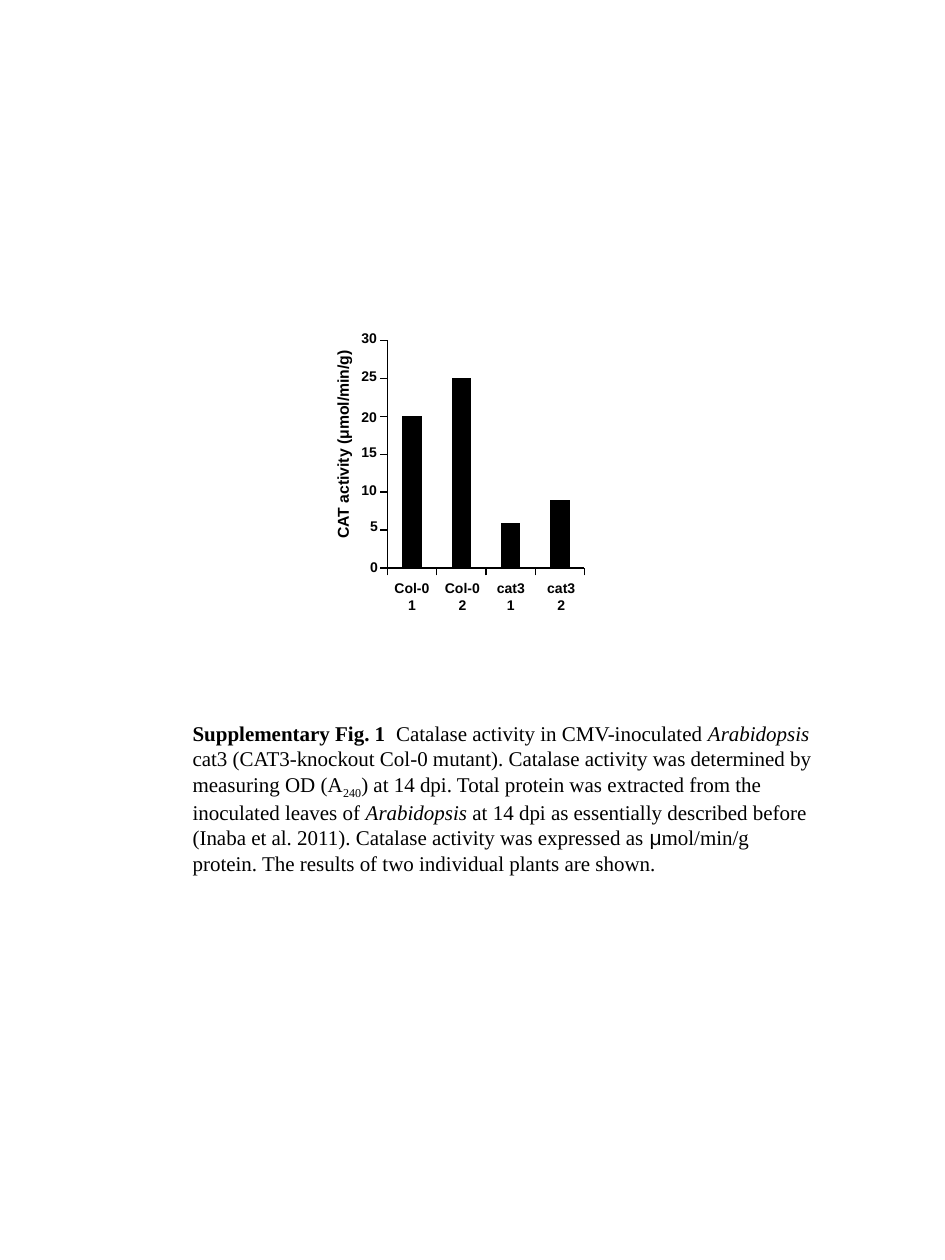
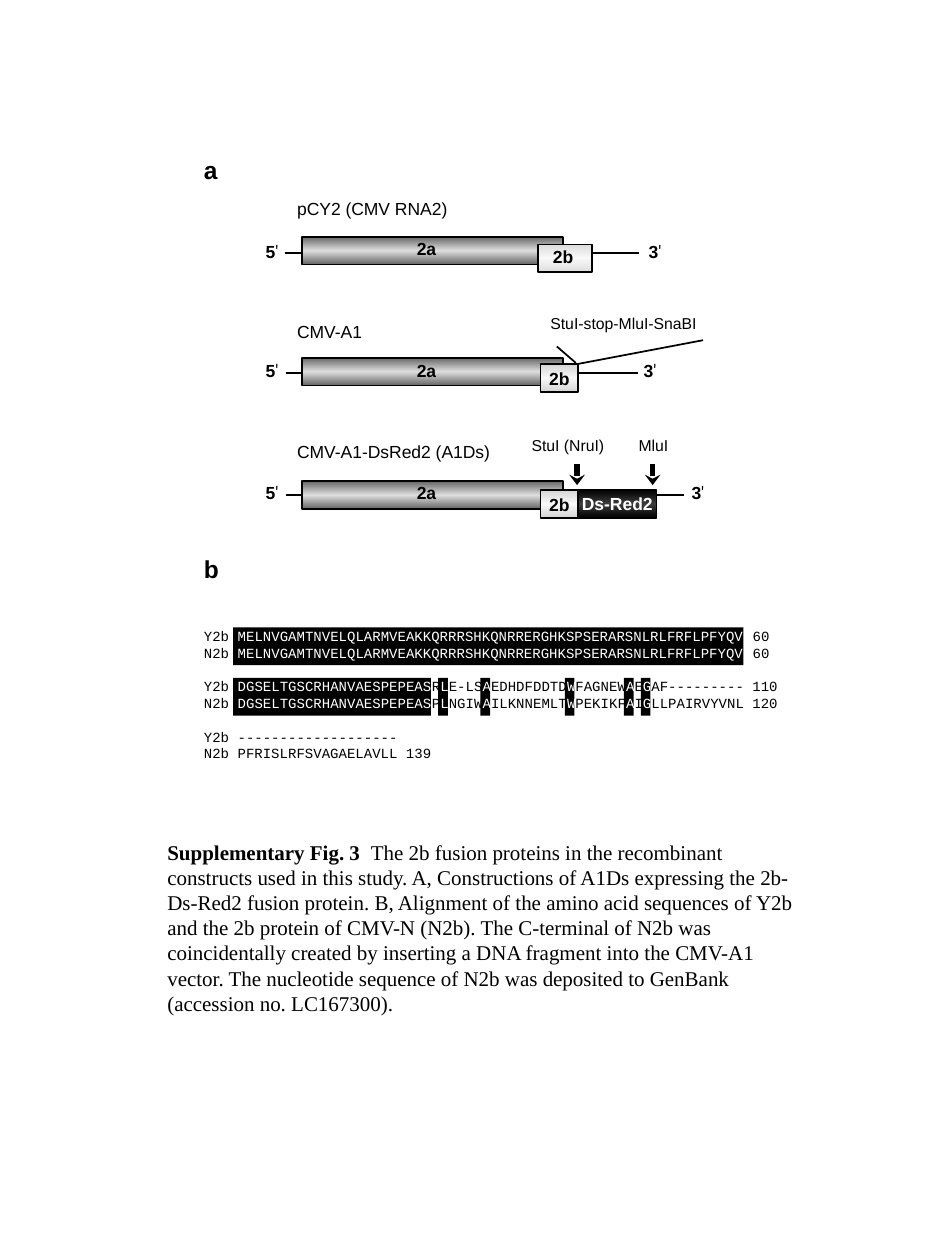
import copy
import itertools

import pptx
import pptx.chart.data
import pptx.dml.color
import pptx.enum.chart
import pptx.enum.shapes
import pptx.enum.text
import pptx.oxml
import pptx.oxml.ns
import pptx.util

Inches = pptx.util.Inches
RGBColor = pptx.dml.color.RGBColor
qn = pptx.oxml.ns.qn
CENTER = pptx.enum.text.PP_ALIGN.CENTER

# Shared colours and text formats
BLACK = RGBColor(0x00, 0x00, 0x00)
WHITE = RGBColor(0xFF, 0xFF, 0xFF)
DARK_GRAY = (RGBColor(0x66, 0x66, 0x66), RGBColor(0xDD, 0xDD, 0xDD))
PALE_GRAY = (RGBColor(0xDD, 0xDD, 0xDD), RGBColor(0xF8, 0xF8, 0xF8))
SOFT_GRAY = (RGBColor(0xD5, 0xD5, 0xD5), RGBColor(0xF8, 0xF8, 0xF8))
NEAR_BLACK = (BLACK, RGBColor(0x3D, 0x3D, 0x3D))

CAPTION = {"name": "Times New Roman", "size": 12}
AXIS = {"name": "Arial", "size": 8, "bold": True}
AXIS_TITLE = {**AXIS, "size": 9}
PANEL = {**AXIS, "size": 14}
NAME = {"name": "Arial", "size": 10}
GENE = {**NAME, "bold": True}
SITE = {"name": "Arial", "size": 9}
SEQUENCE = {"name": "Courier New", "size": 8}
PRIME = ("′", {"name": "Roboto", "bold": False})
BOLD = {"bold": True}
ITALIC = {"italic": True}
WIDE_SPACE = (" ", {"bold": True, "spc": 300})

# Slide 1 content
CAPTION_1 = [
    ("Supplementary Fig. 1", BOLD),
    WIDE_SPACE,
    ("Catalase activity in CMV-inoculated ", {}),
    ("Arabidopsis", ITALIC),
    (" cat3 (CAT3-knockout Col-0 mutant). Catalase activity was determined by "
     "measuring OD (A", {}),
    ("240", {"baseline": -25000}),
    (") at 14 dpi. Total protein was extracted from the inoculated leaves of ", {}),
    ("Arabidopsis", ITALIC),
    (" at 14 dpi as essentially described before (Inaba et al. 2011). "
     "Catalase activity was expressed as ", {}),
    ("μ", {"name": "Arial"}),
    ("mol/min/g protein. The results of two individual plants are shown.", {}),
]
ACTIVITY = [80, 100, 24, 36]
PLANTS = [("Col-0", "1", 3.03, 0.48), ("Col-0", "2", 3.43, 0.48),
          ("cat3", "1", 3.84, 0.43), ("cat3", "2", 4.24, 0.43)]
SCALE = [("30", 2.57), ("25", 2.87), ("20", 3.19), ("15", 3.47),
         ("10", 3.77), ("5", 4.06), ("0", 4.38)]
PLOT_AREA = {"x": 0.199, "y": 0.065, "w": 0.73, "h": 0.765}

# Slide 2 content: lines are (x1, y1, x2, y2), boxes (left, top, width, shades),
# labels (text, left, top, width, format)
CONSTRUCTS = [
    {"name": "pCY2 (CMV RNA2)", "name_top": 1.52, "bar_top": 1.88,
     "label_top": 1.84, "end_top": 1.86, "three_left": 5.05,
     "lines": [(2.26, 2.01, 5.07, 2.01)],
     "boxes": [(4.27, 1.94, 0.43, PALE_GRAY)],
     "labels": [("2b", 4.29, 1.9, 0.4, GENE)]},
    {"name": "CMV-A1", "name_top": 2.5, "bar_top": 2.84,
     "label_top": 2.81, "end_top": 2.81, "three_left": 5.01,
     "lines": [(2.27, 2.96, 3.05, 2.96), (4.59, 2.96, 5.06, 2.96),
               (4.42, 2.75, 4.57, 2.88), (4.58, 2.89, 5.58, 2.7)],
     "boxes": [(4.29, 2.89, 0.3, SOFT_GRAY)],
     "labels": [("2b", 4.26, 2.87, 0.37, GENE),
                ("StuI-stop-MluI-SnaBI", 4.27, 2.44, 1.56, SITE)]},
    {"name": "CMV-A1-DsRed2 (A1Ds)", "name_top": 3.45, "bar_top": 3.82,
     "label_top": 3.78, "end_top": 3.78, "three_left": 5.39,
     "lines": [(2.27, 3.93, 2.87, 3.93), (5.17, 3.93, 5.43, 3.93)],
     "boxes": [(4.59, 3.89, 0.62, NEAR_BLACK), (4.29, 3.89, 0.3, SOFT_GRAY)],
     "labels": [("Ds-Red2", 4.52, 3.86, 0.76, {**GENE, "color": WHITE}),
                ("2b", 4.26, 3.87, 0.37, GENE),
                ("StuI (NruI)", 4.12, 3.41, 0.79, SITE),
                ("MluI", 4.97, 3.41, 0.44, SITE)]},
]
CUT_SITES = [4.58, 5.18]
PANELS = [("a", 1.18), ("b", 4.35)]
ALIGNMENT = [
    (("MELNVGAMTNVELQLARMVEAKKQRRRSHKQNRRERGHKSPSERARSNLRLFRFLPFYQV", "60"),
     ("MELNVGAMTNVELQLARMVEAKKQRRRSHKQNRRERGHKSPSERARSNLRLFRFLPFYQV", "60")),
    (("DGSELTGSCRHANVAESPEPEASRLE-LSAEDHDFDDTDWFAGNEWAEGAF---------", "110"),
     ("DGSELTGSCRHANVAESPEPEASPLNGIWAILKNNEMLTWPEKIKFAIGLLPAIRVYVNL", "120")),
    (("-------------------", ""), ("PFRISLRFSVAGAELAVLL", "139")),
]
BLOCK_TOPS = [4.98, 5.38, 5.78]
RESIDUE_WIDTH = 4.02 / 60
CAPTION_2 = [
    ("Supplementary Fig. 3", BOLD),
    WIDE_SPACE,
    ("The 2b fusion proteins in the recombinant constructs used in this study. "
     "A, Constructions of A1Ds expressing the 2b-Ds-Red2 fusion protein. "
     "B, Alignment of the amino acid sequences of Y2b and the 2b protein of CMV-N "
     "(N2b). The C-terminal of N2b was coincidentally created by inserting a DNA "
     "fragment into the CMV-A1 vector. The nucleotide sequence of N2b was deposited "
     "to GenBank (accession no. LC167300).", {}),
]


def set_font(font, values):
    for key, value in {"color": BLACK, **values}.items():
        if key == "color":
            font.color.rgb = value
        elif key in ("baseline", "spc"):
            font._element.set(key, str(value))
        else:
            setattr(font, key, pptx.util.Pt(value) if key == "size" else value)


def add_text(slide, box, paragraphs, style, wrap=True, align=None):
    """Each paragraph is a list of (text, format changes) runs."""
    shape = slide.shapes.add_textbox(*map(Inches, box))
    frame = shape.text_frame
    frame.word_wrap = wrap
    for index, runs in enumerate(paragraphs):
        paragraph = frame.paragraphs[0] if index == 0 else frame.add_paragraph()
        paragraph.alignment = align
        for text, changes in runs:
            run = paragraph.add_run()
            run.text = text
            set_font(run.font, {**style, **changes})
    return shape


def add_label(slide, text, left, top, width, style, height=0.27, wrap=True):
    return add_text(slide, (left, top, width, height), [[(text, {})]], style, wrap)


def add_box(slide, left, top, width, height, shades=None):
    """A black block, or an outlined box shaded edge, middle, edge."""
    shape = slide.shapes.add_shape(pptx.enum.shapes.MSO_SHAPE.RECTANGLE,
                                   *map(Inches, (left, top, width, height)))
    shape.shadow.inherit = False
    if shades is None:
        shape.fill.solid()
        shape.fill.fore_color.rgb = BLACK
        shape.line.fill.background()
        return
    shape.line.color.rgb = BLACK
    shape.line.width = pptx.util.Pt(1)
    shape.fill.gradient()
    shape.fill.gradient_angle = 90
    stop_list = shape._element.spPr.find(".//" + qn("a:gsLst"))
    stop_list.append(copy.deepcopy(stop_list[0]))
    edge, middle = shades
    for stop, position, color in zip(shape.fill.gradient_stops, (0, 0.5, 1),
                                     (edge, middle, edge)):
        stop.position = position
        stop.color.rgb = color


def add_line(slide, ends, width=1, arrow=False):
    line = slide.shapes.add_connector(pptx.enum.shapes.MSO_CONNECTOR.STRAIGHT,
                                      *map(Inches, ends))
    line.line.color.rgb = BLACK
    line.line.width = pptx.util.Pt(width)
    properties = line._element.spPr
    if arrow:
        namespace = pptx.oxml.ns.nsdecls("a")
        properties.find(qn("a:ln")).append(pptx.oxml.parse_xml(
            f'<a:tailEnd {namespace} type="stealth" w="med" len="sm"/>'))
    properties.append(properties.makeelement(qn("a:effectLst"), {}))


def add_activity_chart(slide):
    data = pptx.chart.data.CategoryChartData()
    data.categories = ["1", "2", "3", "4"]
    data.add_series("Series 1", ACTIVITY)
    chart = slide.shapes.add_chart(
        pptx.enum.chart.XL_CHART_TYPE.COLUMN_CLUSTERED,
        *map(Inches, (2.65, 2.55, 2.14, 2.36)), data).chart
    set_font(chart.font, AXIS_TITLE)
    chart.has_title = chart.has_legend = False
    plot = chart.plots[0]
    plot.gap_width = 150
    plot.vary_by_categories = False
    plot.series[0].format.fill.solid()
    plot.series[0].format.fill.fore_color.rgb = BLACK
    for axis in (chart.category_axis, chart.value_axis):
        axis.has_major_gridlines = False
        axis.major_tick_mark = pptx.enum.chart.XL_TICK_MARK.OUTSIDE
        axis.tick_label_position = pptx.enum.chart.XL_TICK_LABEL_POSITION.NONE
        axis.format.line.color.rgb = BLACK
        axis.format.line.width = pptx.util.Pt(0.75)
    scale = {"minimum_scale": 0, "maximum_scale": 120, "major_unit": 20}
    for key, value in scale.items():
        setattr(chart.value_axis, key, value)
    # Fixed inner plot area
    plot_area = chart._chartSpace.find(".//" + qn("c:plotArea"))
    for layout in plot_area.findall(qn("c:layout")):
        plot_area.remove(layout)
    settings = '<c:layoutTarget val="inner"/><c:xMode val="edge"/><c:yMode val="edge"/>'
    settings += "".join(f'<c:{key} val="{value}"/>' for key, value in PLOT_AREA.items())
    plot_area.insert(0, pptx.oxml.parse_xml(
        f'<c:layout {pptx.oxml.ns.nsdecls("c")}><c:manualLayout>{settings}'
        "</c:manualLayout></c:layout>"))


def add_construct(slide, construct):
    for ends in construct["lines"]:
        add_line(slide, ends)
    add_box(slide, 2.4, construct["bar_top"], 2.07, 0.22, DARK_GRAY)
    for left, top, width, shades in construct["boxes"]:
        add_box(slide, left, top, width, 0.22, shades)
    add_label(slide, construct["name"], 2.26, construct["name_top"], 2.05, NAME)
    add_label(slide, "2a", 3.21, construct["label_top"], 0.53, GENE)
    for digit, left in (("5", 2.01), ("3", construct["three_left"])):
        add_text(slide, (left, construct["end_top"], 0.35, 0.27),
                 [[(digit, {}), PRIME]], GENE)
    for text, left, top, width, style in construct["labels"]:
        add_label(slide, text, left, top, width, style, wrap=style is not SITE)


def add_alignment(slide):
    """Residues that match in both rows are white on black."""
    paragraphs = []
    for block_top, rows in zip(BLOCK_TOPS, ALIGNMENT):
        pairs = list(zip(rows[0][0], rows[1][0]))
        lines = [[(name + " ", {})] for name in ("Y2b", "N2b")]
        column = 0
        for match, group in itertools.groupby(pairs, lambda pair: pair[0] == pair[1]):
            group = list(group)
            for row, line in enumerate(lines):
                text = "".join(pair[row] for pair in group)
                line.append((text, {"color": WHITE if match else BLACK}))
            if match:
                pad = 0.02 if len(group) > 1 else 0
                add_box(slide, 1.87 + column * RESIDUE_WIDTH - pad, block_top,
                        len(group) * RESIDUE_WIDTH + 0.01 + pad, 0.3)
            column += len(group)
        for line, (_, count) in zip(lines, rows):
            if count:
                line.append((" " + count, {}))
        paragraphs += lines
    shape = add_text(slide, (1.52, 4.93, 4.78, 1.18), paragraphs, SEQUENCE)
    for paragraph in shape.text_frame.paragraphs[2::2]:
        paragraph.space_before = pptx.util.Pt(9.6)


def main():
    presentation = pptx.Presentation()
    presentation.slide_width, presentation.slide_height = Inches(7.5), Inches(10)
    blank = presentation.slide_layouts[6]

    # Slide 1: catalase activity
    slide = presentation.slides.add_slide(blank)
    add_text(slide, (1.43, 5.67, 5.12, 1.31), [CAPTION_1], CAPTION)
    add_activity_chart(slide)
    for line, number, left, width in PLANTS:
        add_text(slide, (left, 4.55, width, 0.37), [[(line, {})], [(number, {})]],
                 AXIS, wrap=False, align=CENTER)
    for value, top in SCALE:
        left, width = (2.77, 0.33) if len(value) == 2 else (2.84, 0.27)
        add_label(slide, value, left, top, width, AXIS, 0.24, wrap=False)
    title = add_label(slide, "CAT activity (μmol/min/g)", 1.86, 3.39, 1.72,
                      AXIS_TITLE, 0.25, wrap=False)
    title.rotation = 270

    # Slide 2: constructs and alignment
    slide = presentation.slides.add_slide(blank)
    for construct in CONSTRUCTS:
        add_construct(slide, construct)
    for x in CUT_SITES:
        add_line(slide, (x, 3.68, x, 3.85), width=3, arrow=True)
    add_text(slide, (1.23, 6.61, 5.3, 1.51), [CAPTION_2], CAPTION)
    for letter, top in PANELS:
        add_label(slide, letter, 1.52, top, 0.32, PANEL, 0.34, wrap=False)
    add_alignment(slide)

    presentation.save("out.pptx")


if __name__ == "__main__":
    main()
